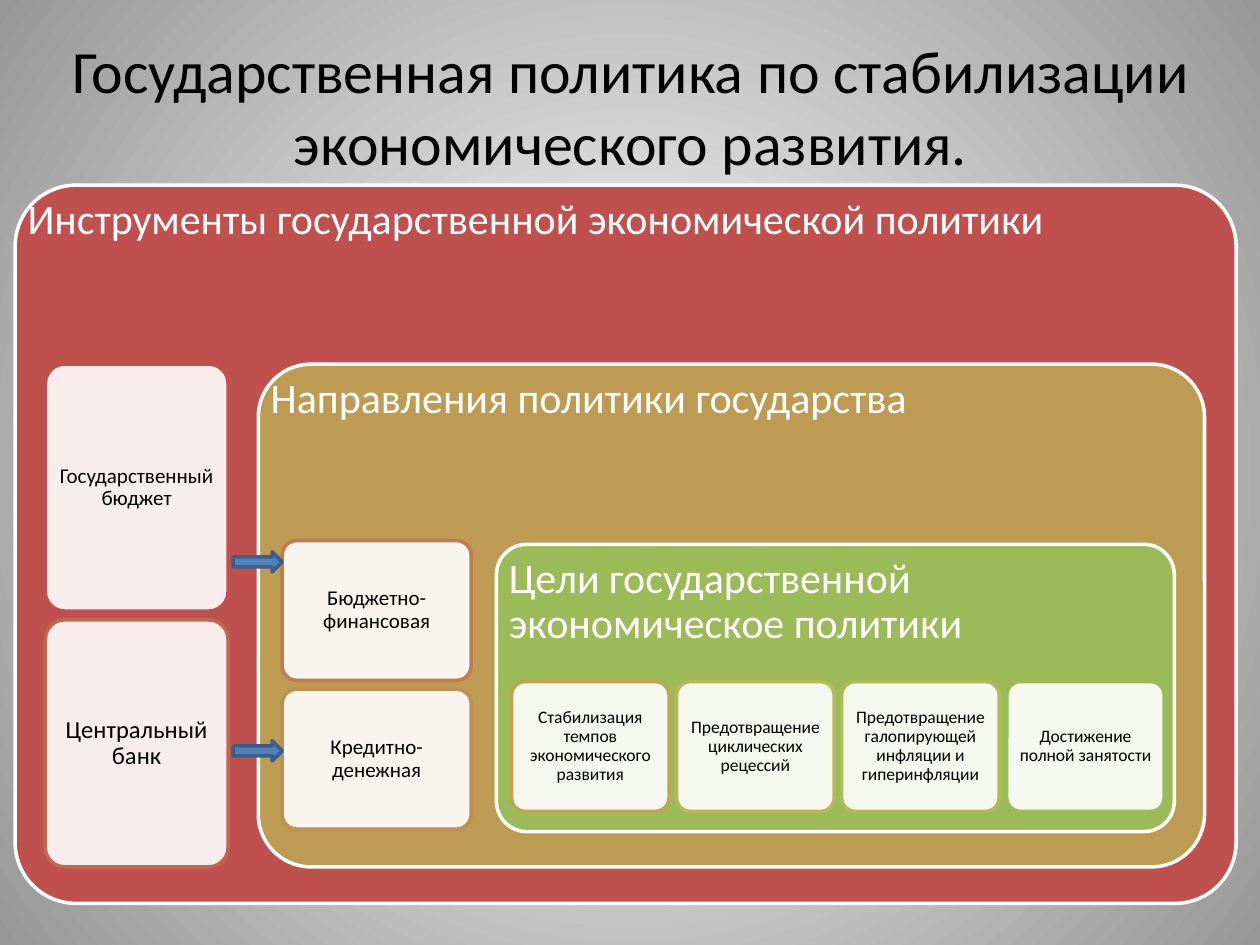
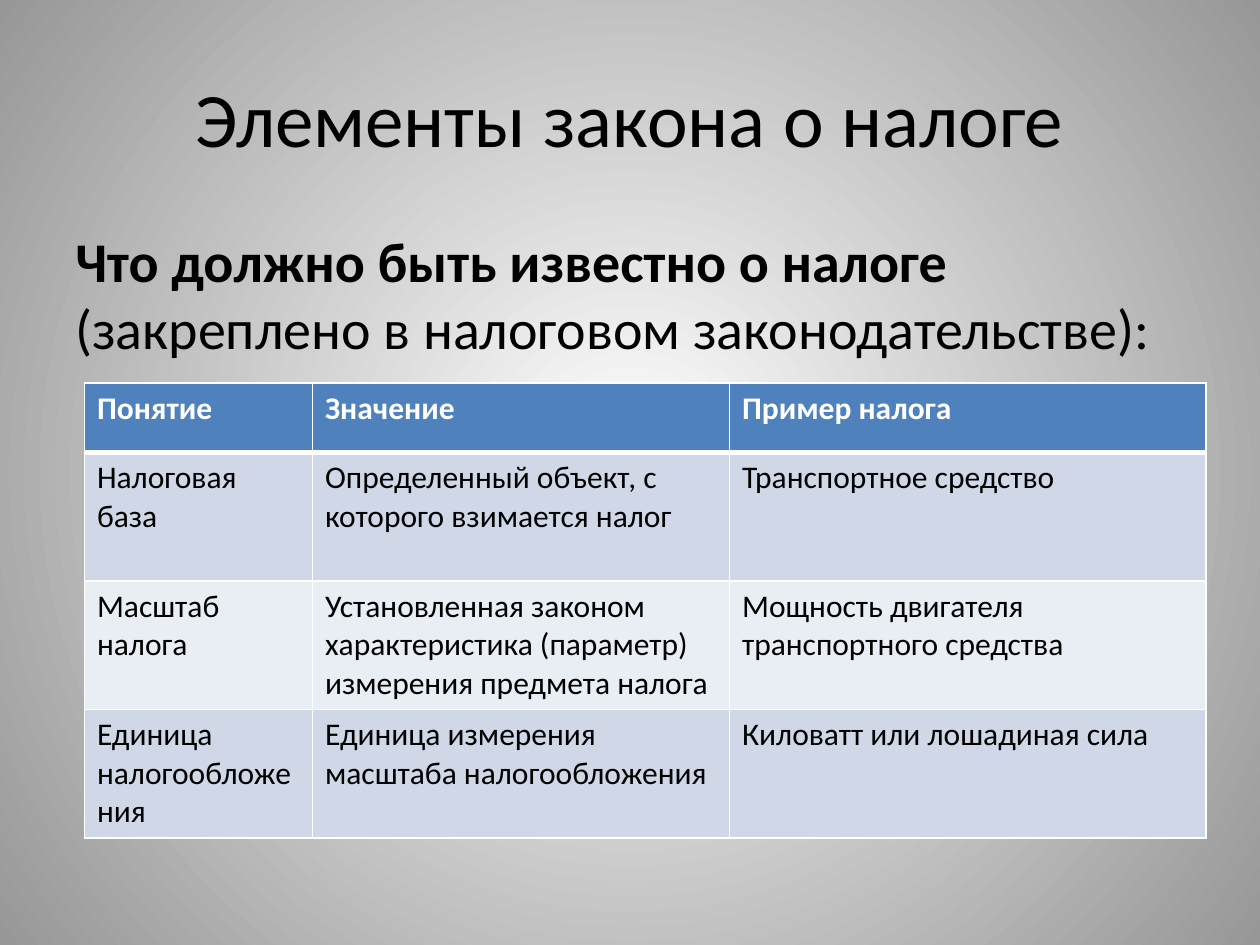
import pptx
import pptx.util
import pptx.oxml
from pptx.dml.color import RGBColor
from pptx.enum.shapes import MSO_SHAPE
from pptx.enum.text import MSO_ANCHOR, PP_ALIGN
from pptx.oxml.ns import qn
from pptx.util import Inches

# Shared style
FONT = "Calibri"
BLACK = RGBColor(0x00, 0x00, 0x00)
WHITE = RGBColor(0xFF, 0xFF, 0xFF)
GREY = RGBColor(0x97, 0x97, 0x97)
BLUE = RGBColor(0x4F, 0x81, 0xBD)
DARK_BLUE = RGBColor(0x3A, 0x5F, 0x8C)
RED = RGBColor(0xC0, 0x50, 0x4D)
OCHRE = RGBColor(0xBD, 0x9B, 0x53)
GREEN = RGBColor(0x9B, 0xBB, 0x59)
BAND_DARK = RGBColor(0xD0, 0xD8, 0xE8)
BAND_LIGHT = RGBColor(0xE9, 0xED, 0xF4)
DRAWING_NS = "http://schemas.openxmlformats.org/drawingml/2006/main"

# Nested panels: box, corner, fill, heading
PANELS = [
    ((0.12, 1.47, 9.69, 5.7), 0.085, RED, "Инструменты государственной экономической политики"),
    ((2.05, 2.89, 7.51, 3.99), 0.105, OCHRE, "Направления политики государства"),
    ((3.94, 4.32, 5.38, 2.28), 0.105, GREEN, "Цели государственной экономическое политики"),
]

# Cards: text, size, outline
INSTRUMENTS = [
    ("Государственный бюджет", 12, RED),
    ("Центральный банк", 14, RGBColor(0xBF, 0x67, 0x4F)),
]
DIRECTIONS = [
    ("Бюджетно-финансовая", 12, RGBColor(0xBF, 0x7C, 0x50)),
    ("Кредитно-денежная", 12, RGBColor(0xBE, 0x91, 0x52)),
]
GOALS = [
    ("Стабилизация темпов экономического развития", 10, RGBColor(0xBD, 0xA5, 0x54)),
    ("Предотвращение циклических рецессий", 10, RGBColor(0xBC, 0xB8, 0x56)),
    ("Предотвращение галопирующей инфляции и гиперинфляции", 10, RGBColor(0xAE, 0xBC, 0x57)),
    ("Достижение полной занятости", 10, GREEN),
]

TAX_ROWS = [
    ("Понятие", "Значение", "Пример налога"),
    ("Налоговая база", "Определенный объект, с которого взимается налог",
     "Транспортное средство"),
    ("Масштаб налога", "Установленная законом характеристика (параметр) измерения предмета налога",
     "Мощность двигателя транспортного средства"),
    ("Единица налогообложения", "Единица измерения масштаба налогообложения",
     "Киловатт или лошадиная сила"),
]
COLUMN_WIDTHS = [1.81, 3.31, 3.78]
ROW_HEIGHTS = [0.55, 1.02, 1.02, 1.02]


def add_run(paragraph, text, size, color=BLACK, bold=False):
    run = paragraph.add_run()
    run.text = text
    run.font.name = FONT
    run.font.size = pptx.util.Pt(size)
    run.font.color.rgb = color
    run.font.bold = bold


def add_text(slide, box, runs, align=PP_ALIGN.LEFT, anchor=MSO_ANCHOR.TOP):
    frame = slide.shapes.add_textbox(*map(Inches, box)).text_frame
    frame.word_wrap = True
    frame.vertical_anchor = anchor
    paragraph = frame.paragraphs[0]
    paragraph.alignment = align
    for run in runs:
        add_run(paragraph, *run)
    return frame


def add_slide(presentation, title, title_box, title_size):
    """Blank slide with the radial background and a centred title."""
    slide = presentation.slides.add_slide(presentation.slide_layouts[6])
    fill = slide.background.fill
    fill.gradient()
    for stop, color, position in zip(fill.gradient_stops, (WHITE, GREY), (0, 1)):
        stop.color.rgb = color
        stop.position = position
    gradient = slide.background._cSld.find(".//" + qn("a:gradFill"))
    gradient.replace(gradient.find(qn("a:lin")), pptx.oxml.parse_xml(
        f'<a:path xmlns:a="{DRAWING_NS}" path="circle">'
        '<a:fillToRect l="50000" t="50000" r="50000" b="50000"/></a:path>'))
    add_text(slide, title_box, [(title, title_size)], PP_ALIGN.CENTER, MSO_ANCHOR.MIDDLE)
    return slide


def add_box(slide, kind, box, fill, outline):
    shape = slide.shapes.add_shape(kind, *map(Inches, box))
    shape.shadow.inherit = False
    shape.fill.solid()
    shape.fill.fore_color.rgb = fill
    shape.line.color.rgb = outline
    shape.line.width = pptx.util.Pt(2)
    return shape


def add_panel(slide, box, corner, fill, heading):
    shape = add_box(slide, MSO_SHAPE.ROUNDED_RECTANGLE, box, fill, WHITE)
    shape.adjustments[0] = corner
    left, top, width, _ = box
    frame = add_text(slide, (left, top, width, 1), [(heading, 24, WHITE)])
    frame.margin_top = Inches(0.1)
    frame.paragraphs[0].line_spacing = 0.9


def add_card(slide, box, text, size, outline):
    shape = add_box(slide, MSO_SHAPE.ROUNDED_RECTANGLE, box, WHITE, outline)
    shape.adjustments[0] = 0.105
    color = shape._element.spPr.find(qn("a:solidFill"))[0]
    color.append(pptx.oxml.parse_xml(f'<a:alpha xmlns:a="{DRAWING_NS}" val="90000"/>'))
    frame = shape.text_frame
    frame.word_wrap = True
    frame.vertical_anchor = MSO_ANCHOR.MIDDLE
    frame.margin_left = frame.margin_right = Inches(0.01)
    frame.margin_top = frame.margin_bottom = Inches(0.01)
    paragraph = frame.paragraphs[0]
    paragraph.alignment = PP_ALIGN.CENTER
    paragraph.line_spacing = 0.9
    add_run(paragraph, text, size)


def add_cards(slide, cards, first_box, step_x=0, step_y=0):
    left, top, width, height = first_box
    for index, card in enumerate(cards):
        add_card(slide, (left + index * step_x, top + index * step_y, width, height), *card)


def set_borders(cell, **widths):
    """White cell borders; widths in points by side (L, R, T, B)."""
    properties = cell._tc.get_or_add_tcPr()
    for side, width in widths.items():
        properties.append(pptx.oxml.parse_xml(
            f'<a:ln{side} xmlns:a="{DRAWING_NS}" w="{pptx.util.Pt(width)}">'
            f'<a:solidFill><a:srgbClr val="{WHITE}"/></a:solidFill></a:ln{side}>'))


def add_tax_table(slide, left, top):
    table = slide.shapes.add_table(
        len(TAX_ROWS), len(COLUMN_WIDTHS), Inches(left), Inches(top),
        Inches(sum(COLUMN_WIDTHS)), Inches(sum(ROW_HEIGHTS))).table
    for column, width in zip(table.columns, COLUMN_WIDTHS):
        column.width = Inches(width)
    for row_index, texts in enumerate(TAX_ROWS):
        table.rows[row_index].height = Inches(ROW_HEIGHTS[row_index])
        header = row_index == 0
        fill = BLUE if header else (BAND_DARK if row_index % 2 else BAND_LIGHT)
        for cell, text in zip(table.rows[row_index].cells, texts):
            set_borders(cell, L=1, R=1, T=3 if row_index == 1 else 1, B=3 if header else 1)
            cell.fill.solid()
            cell.fill.fore_color.rgb = fill
            add_run(cell.text_frame.paragraphs[0], text, 18, WHITE if header else BLACK, header)


def build_policy_slide(presentation):
    slide = add_slide(presentation,
                      "Государственная политика по стабилизации экономического развития.",
                      (0.28, 0.21, 9.45, 1.26), 34.2)
    for panel in PANELS:
        add_panel(slide, *panel)
    add_cards(slide, INSTRUMENTS, (0.36, 2.89, 1.45, 1.96), step_y=2.03)
    add_cards(slide, DIRECTIONS, (2.24, 4.29, 1.5, 1.11), step_y=1.18)
    add_cards(slide, GOALS, (4.06, 5.41, 1.25, 1.03), step_x=1.31)
    # Arrows from instruments to directions
    for top in (4.38, 5.88):
        add_box(slide, MSO_SHAPE.RIGHT_ARROW, (1.85, top, 0.39, 0.16), BLUE, DARK_BLUE)


def build_tax_slide(presentation):
    slide = add_slide(presentation, "Элементы закона о налоге", (0.5, 0.3, 9, 1.25), 44)
    add_text(slide, (0.5, 1.75, 9, 4.95), [
        ("Что должно быть известно о налоге ", 32, BLACK, True),
        ("(закреплено в налоговом законодательстве):", 32),
    ])
    add_tax_table(slide, 0.67, 3.04)


def main():
    presentation = pptx.Presentation()
    presentation.slide_width = Inches(10)
    presentation.slide_height = Inches(7.5)
    build_policy_slide(presentation)
    build_tax_slide(presentation)
    presentation.save("out.pptx")


if __name__ == "__main__":
    main()
